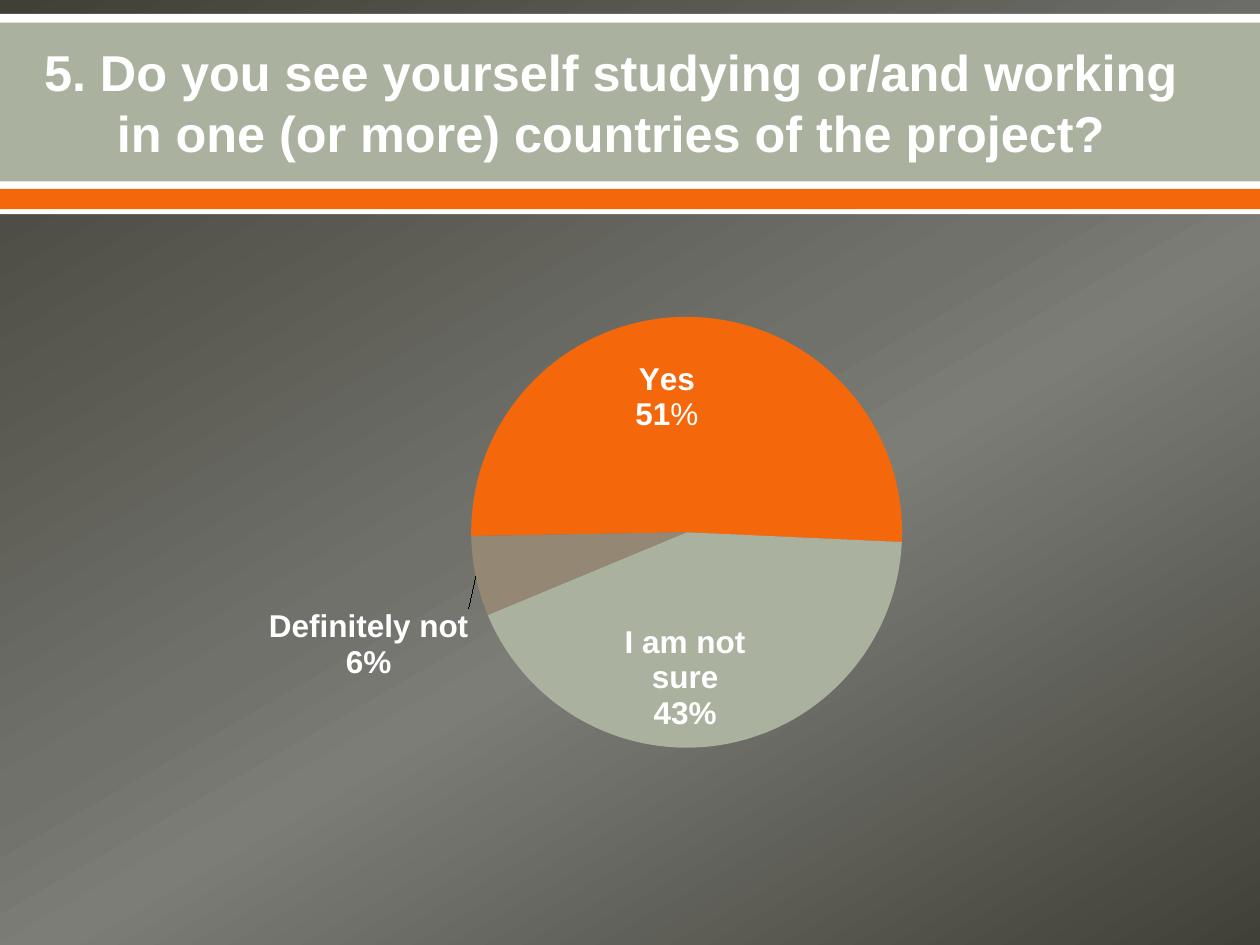
from lxml import etree
from pptx import Presentation
from pptx.chart.data import CategoryChartData
from pptx.dml.color import RGBColor
from pptx.enum.chart import XL_CHART_TYPE as ChartType, XL_LABEL_POSITION as LabelPosition
from pptx.enum.shapes import MSO_SHAPE as Shape
from pptx.enum.text import MSO_ANCHOR as Anchor, PP_ALIGN as Align
from pptx.oxml import parse_xml
from pptx.oxml.ns import nsdecls, qn
from pptx.util import Inches, Pt

FONT = "Arial"
WHITE = "FFFFFF"
TITLE = "5. Do you see yourself studying or/and working in one (or more) countries of the project?"
GRADIENT = [(0, "404037"), (48, "71716B"), (58, "7D7D78"), (100, "404037")]
GRADIENT_ANGLE = 60
BANDS = [(0.11, 1.59, WHITE), (0.18, 1.26, "ABB19F"), (1.5, 0.16, "F4680B")]
ANSWERS = [
    ("Yes", 51, "F4680B", LabelPosition.INSIDE_END, (-0.02, 0.06)),
    ("I am not sure", 43, "ABB19F", LabelPosition.INSIDE_END, (0.02, -0.01)),
    ("Definitely not", 6, "948774", LabelPosition.OUTSIDE_END, (0, 0.05)),
]
YES_LABEL = [[("Yes", True)], [("51", True), ("%", False)]]
PLOT = {"x": 0.36, "y": 0.15, "w": 0.38, "h": 0.7}


def color(value):
    return RGBColor.from_string(value)


def style(font, size=18, bold=True, fill=WHITE):
    font.name, font.size, font.bold = FONT, Pt(size), bold
    font.color.rgb = color(fill)


def add_text(para, text, **kwargs):
    span = para.add_run()
    span.text = text
    style(span.font, **kwargs)


def manual_layout(values, target=None, edge=False):
    layout = etree.Element(qn("c:layout"))
    manual = etree.SubElement(layout, qn("c:manualLayout"))
    settings = dict(values)
    if edge:
        settings = {"layoutTarget": target, "xMode": "edge", "yMode": "edge", **settings}
    for name, value in settings.items():
        etree.SubElement(manual, qn("c:" + name), val=str(value))
    return layout


def paint_background(page):
    stops = "".join(
        f'<a:gs pos="{place * 1000}"><a:srgbClr val="{value}"/></a:gs>' for place, value in GRADIENT
    )
    background = parse_xml(
        f'<p:bg {nsdecls("p", "a")}><p:bgPr><a:gradFill rotWithShape="1"><a:gsLst>{stops}</a:gsLst>'
        f'<a:lin ang="{GRADIENT_ANGLE * 60000}" scaled="0"/></a:gradFill><a:effectLst/></p:bgPr></p:bg>'
    )
    page.element.cSld.insert(0, background)


def add_bands(page):
    for top, height, fill in BANDS:
        band = page.shapes.add_shape(Shape.RECTANGLE, 0, Inches(top), Inches(10), Inches(height))
        band.shadow.inherit = False
        band.fill.solid()
        band.fill.fore_color.rgb = color(fill)
        band.line.fill.background()


def add_title(page):
    title = page.shapes.title
    title.left, title.top = Inches(0.2), Inches(0.2)
    title.width, title.height = Inches(9.3), Inches(1.22)
    frame = title.text_frame
    frame.word_wrap = True
    frame.vertical_anchor = Anchor.MIDDLE
    para = frame.paragraphs[0]
    para.alignment = Align.CENTER
    add_text(para, TITLE, size=28.8)
    page.shapes.element.append(title.element)


def show_category_and_percent(element):
    for name, value in (("showVal", "0"), ("showCatName", "1"), ("showPercent", "1")):
        element.find(qn("c:" + name)).set("val", value)
    separator = etree.Element(qn("c:separator"))
    separator.text = "\n"
    element.find(qn("c:showPercent")).getnext().addnext(separator)


def label_point(point, index, position, offset):
    label = point.data_label
    if index == 0:
        frame = label.text_frame
        for row, parts in enumerate(YES_LABEL):
            para = frame.paragraphs[0] if row == 0 else frame.add_paragraph()
            for text, bold in parts:
                add_text(para, text, bold=bold)
    else:
        style(label.font)
    label.position = position
    element = next(
        item for item in point.data_label.font._element.iterancestors(qn("c:dLbl"))
    ) if index else frame._txBody.getparent().getparent()
    show_category_and_percent(element)
    element.find(qn("c:idx")).addnext(manual_layout(zip("xy", offset)))


def add_pie(page):
    data = CategoryChartData()
    data.categories = [answer[0] for answer in ANSWERS]
    data.add_series("Series 1", [answer[1] for answer in ANSWERS])
    chart = page.shapes.add_chart(
        ChartType.PIE, Inches(0.5), Inches(1.75), Inches(9), Inches(4.95), data
    ).chart
    chart.has_legend = chart.has_title = False
    style(chart.font, bold=False)
    plot = chart.plots[0]
    plot.vary_by_categories = True
    series = plot.series[0]
    labels = series.data_labels
    style(labels.font)
    labels.show_value = False
    labels.show_category_name = labels.show_percentage = True
    labels.position = LabelPosition.INSIDE_END
    for index, (_, _, fill, position, offset) in enumerate(ANSWERS):
        point = series.points[index]
        point.format.fill.solid()
        point.format.fill.fore_color.rgb = color(fill)
        label_point(point, index, position, offset)

    pie = plot._element
    angle = pie.find(qn("c:firstSliceAng"))
    if angle is None:
        angle = etree.SubElement(pie, qn("c:firstSliceAng"))
    angle.set("val", "269")
    area = pie.getparent()
    for old in area.findall(qn("c:layout")):
        area.remove(old)
    area.insert(0, manual_layout(PLOT, target="inner", edge=True))


def main():
    deck = Presentation()
    deck.slide_width, deck.slide_height = Inches(10), Inches(7.5)
    page = deck.slides.add_slide(deck.slide_layouts[5])
    paint_background(page)
    add_bands(page)
    add_title(page)
    add_pie(page)
    deck.save("out.pptx")


if __name__ == "__main__":
    main()
